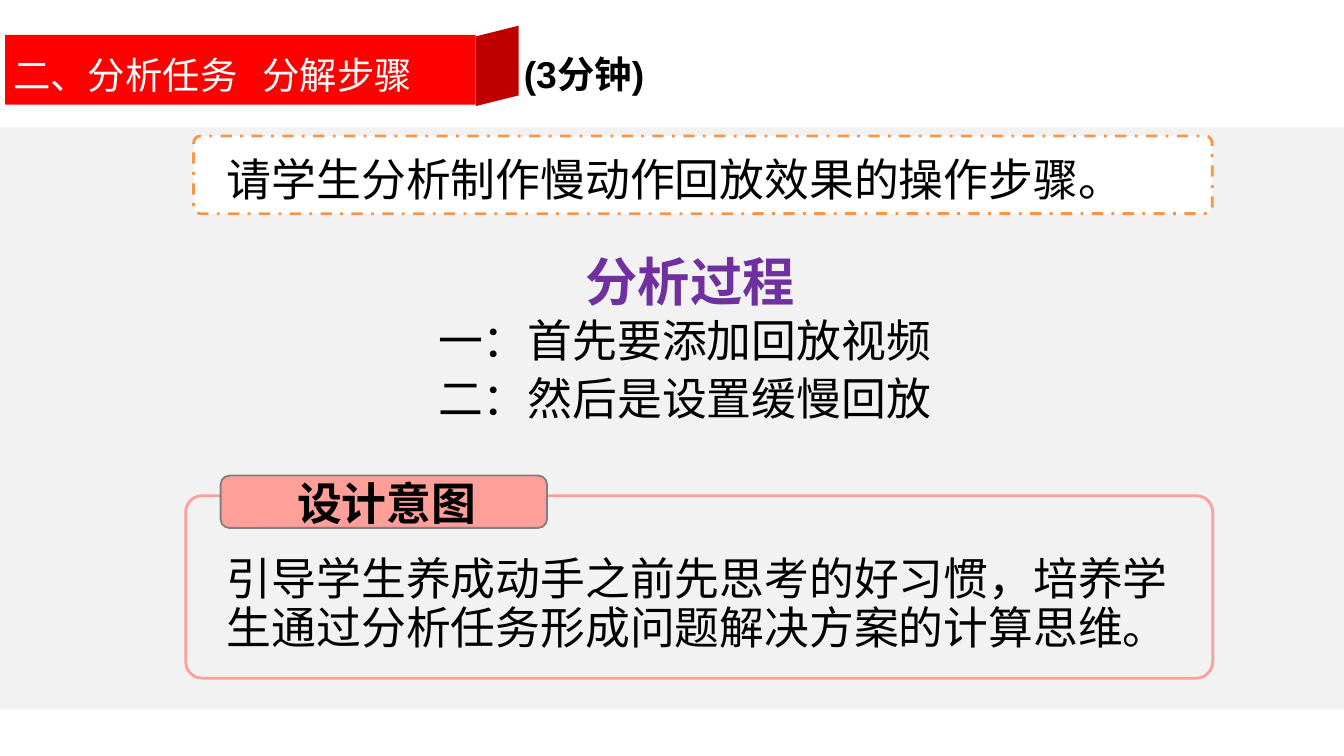
from lxml import etree
from pptx import Presentation, util as u
from pptx.dml.color import RGBColor
from pptx.enum import dml, shapes as sh, text as t
from pptx.oxml.ns import qn

Cm, Pt = u.Cm, u.Pt
KIND = sh.MSO_SHAPE
CJK = "Noto Sans CJK SC"
HUES = {
    "panel": "F2F2F2", "white": "FFFFFF", "black": "000000",
    "red": "FF0000", "fold": "C00000", "plum": "7030A0",
    "rose": "FF9F99", "gray": "808080", "gold": "F79646",
}


def hue(name):
    """Return the named colour."""
    return RGBColor.from_string(HUES[name])


def put(obj, vals):
    """Set each attribute in vals on obj."""
    for key, val in vals.items():
        setattr(obj, key, val)


def block(host, kind, box, fill, edge=None, adj=None, **line):
    """Add a filled preset shape."""
    part = host.add_shape(kind, *map(Cm, box))
    part.shadow.inherit = False
    part.fill.solid()
    part.fill.fore_color.rgb = hue(fill)
    if edge:
        part.line.fill.solid()
        part.line.fill.fore_color.rgb = hue(edge)
        put(part.line, line)
    else:
        part.line.fill.background()
    if adj:
        part.adjustments[0] = adj
    return part


def write(host, box, lines, size, face=CJK, tone="black", bold=False, **para):
    """Add a text box with one paragraph for each line."""
    frame = host.add_textbox(*map(Cm, box)).text_frame
    put(frame, {"word_wrap": True, "auto_size": t.MSO_AUTO_SIZE.SHAPE_TO_FIT_TEXT})
    for i, line in enumerate(lines):
        par = frame.add_paragraph() if i else frame.paragraphs[0]
        put(par, para)
        if i:
            par.space_before = Cm(0.27)
        run = par.add_run()
        run.text = line
        put(run.font, {"name": face, "size": Pt(size), "bold": bold})
        run.font.color.rgb = hue(tone)
        etree.SubElement(run.font._element, qn("a:ea"), typeface=CJK)
    return frame


def banner(host, x, y, w, h):
    """Draw the folded red title ribbon."""
    group = host.add_group_shape().shapes
    block(group, KIND.RECTANGLE, (x, y, w, h), "red")
    fold = block(group, KIND.PARALLELOGRAM, (x + w - 0.35, y + 0.18, 1.52, 0.81), "fold")
    fold.rotation = 90
    fold._element.spPr.xfrm.set("flipH", "1")
    frame = write(host, (x - 0.1, y + 0.2, w - 0.05, 1.12),
                  ["二、分析任务\t分解步骤"], 20, tone="white")
    stops = etree.SubElement(frame.paragraphs[0]._p.get_or_add_pPr(), qn("a:tabLst"))
    etree.SubElement(stops, qn("a:tab"), pos=str(Cm(4.71)), algn="l")


def steps(host, x, y, w, h):
    """Write the analysis heading and its steps."""
    write(host, (x, y + 1.52, w, h - 1.52),
          ["一：首先要添加回放视频", "二：然后是设置缓慢回放"],
          24, "Arial", line_spacing=0.8)
    write(host, (x + 2.79, y, 4.93, 1.57), ["分析过程"], 28, "Arial",
          "plum", True, line_spacing=1.1)


def intent(host, x, y, w, h):
    """Draw the design intent card with its label."""
    group = host.add_group_shape().shapes
    block(group, KIND.ROUNDED_RECTANGLE, (x, y, w, h), "panel", "rose", 0.09,
          width=Pt(1.5))
    block(group, KIND.ROUNDED_RECTANGLE, (x + 0.66, y - 0.38, 6.17, 0.99),
          "rose", "gray", 0.17, width=Pt(1))
    write(group, (x + 0.5, y - 0.51, 6.6, 1.27), ["设计意图"], 24, bold=True,
          alignment=t.PP_ALIGN.CENTER)
    write(group, (x + 0.53, y + 1.02, w - 0.74, 2.11),
          ["引导学生养成动手之前先思考的好习惯，培养学生通过分析任务形成问题解决方案的计算思维。"],
          24, "Arial", line_spacing=Pt(26))


def task(host, x, y, w, h):
    """Draw the dashed task card."""
    group = host.add_group_shape().shapes
    block(group, KIND.ROUNDED_RECTANGLE, (x, y, w, h), "white", "gold", 0.09,
          width=Pt(1.5), dash_style=dml.MSO_LINE.DASH_DOT)
    write(group, (x + 0.38, y + 0.17, w - 1.04, 1.27),
          ["请学生分析制作慢动作回放效果的操作步骤。"], 24)


def main():
    """Build and save the slide."""
    deck = Presentation()
    put(deck, {"slide_width": Cm(25.4), "slide_height": Cm(14.29)})
    host = deck.slides.add_slide(deck.slide_layouts[6]).shapes
    block(host, KIND.RECTANGLE, (0, 2.41, 25.4, 11), "panel")
    write(host, (9.65, 1.24, 10.49, 1.19), ["(3分钟)"], 20, "Arial",
          bold=True, line_spacing=Pt(13))
    banner(host, 0.1, 0.66, 8.89, 1.32)
    steps(host, 8.03, 4.47, 10.41, 3.93)
    intent(host, 3.51, 9.37, 19.41, 3.45)
    task(host, 3.66, 2.57, 19.25, 1.47)
    deck.save("out.pptx")


if __name__ == "__main__":
    main()
